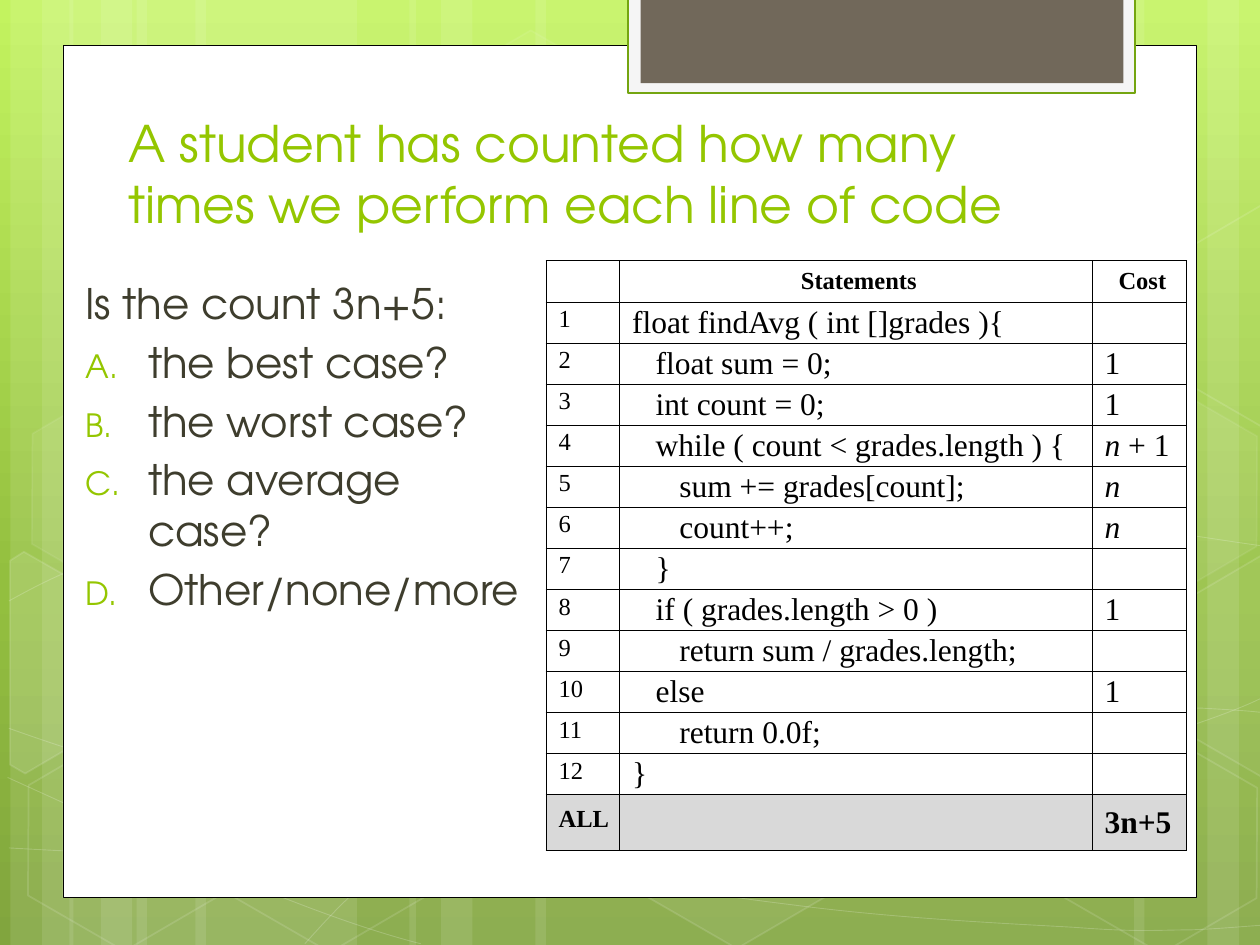
from copy import deepcopy

from lxml import etree
from pptx import Presentation
from pptx.dml.color import RGBColor
from pptx.enum.shapes import MSO_SHAPE
from pptx.enum.text import MSO_ANCHOR, MSO_AUTO_SIZE, PP_ALIGN
from pptx.oxml.ns import qn
from pptx.util import Inches, Pt

RECTANGLE, HEXAGON = MSO_SHAPE.RECTANGLE, MSO_SHAPE.HEXAGON
LEFT, CENTER = PP_ALIGN.LEFT, PP_ALIGN.CENTER
MIDDLE, BOTTOM = MSO_ANCHOR.MIDDLE, MSO_ANCHOR.BOTTOM
NO_FIT = MSO_AUTO_SIZE.NONE

WHITE = RGBColor(0xFF, 0xFF, 0xFF)
BLACK = RGBColor(0x00, 0x00, 0x00)
LIME = RGBColor(0x94, 0xC6, 0x00)
DARK_LIME = RGBColor(0x74, 0xA5, 0x10)
OLIVE = RGBColor(0x3E, 0x3D, 0x2D)
TAUPE = RGBColor(0x71, 0x68, 0x5A)
PALE = RGBColor(0xF5, 0xF5, 0xF5)
GRAY = RGBColor(0xD9, 0xD9, 0xD9)
BACKDROP = [(0, RGBColor(0xC3, 0xF3, 0x5F)), (0.62, RGBColor(0x93, 0xBF, 0x3F)),
            (1, RGBColor(0x81, 0xA5, 0x3E))]
SANS, SERIF = "TeX Gyre Adventor", "Times New Roman"

deck = Presentation()
deck.slide_width, deck.slide_height = Inches(10), Inches(7.5)
page = deck.slides.add_slide(deck.slide_layouts[5])
UNIT = deck.slide_width / 120  # grid of 120 columns by 90 rows


def paint(shape, fill=None, fill_alpha=100, line=None, width=1, line_alpha=100):
    """Set fill and line, with opacities in percent."""
    shape.shadow.inherit = False
    for part, color, alpha in ((shape.fill, fill, fill_alpha),
                               (shape.line.fill, line, line_alpha)):
        if color is None:
            part.background()
            continue
        part.solid()
        part.fore_color.rgb = color
        owner = shape.element.spPr
        if part is not shape.fill:
            shape.line.width = Pt(width)
            owner = owner.find(qn("a:ln"))
        if alpha < 100:
            tint = owner.find(qn("a:solidFill")).find(qn("a:srgbClr"))
            etree.SubElement(tint, qn("a:alpha")).set("val", str(alpha * 1000))


def write(para, text, font, size, color, bold=False, italic=False):
    """Add one run to a paragraph."""
    span = para.add_run()
    span.text = text
    span.font.name, span.font.size = font, Pt(size)
    span.font.color.rgb = color
    span.font.bold, span.font.italic = bold, italic


# Background gradient, light at the top
backdrop = page.background.fill
backdrop.gradient()
backdrop.gradient_angle = 270
stop_list = page.element.find(".//" + qn("a:gsLst"))
stop_list.insert(1, deepcopy(stop_list[0]))
for stop, (position, color) in zip(backdrop.gradient_stops, BACKDROP):
    stop.position, stop.color.rgb = position, color

# Translucent vertical stripes: left column, columns wide
STRIPES = [(13, 21), (1, 6), (4, 10), (18.6, 21), (6.6, 6), (9.6, 10),
           (88, 21), (115, 6), (108, 10), (51, 37), (39, 6), (42, 10)]
for column, span_columns in STRIPES:
    stripe = page.shapes.add_shape(RECTANGLE, int(column * UNIT), 0,
                                   int(span_columns * UNIT), deck.slide_height)
    paint(stripe, WHITE, 10)

# Sweeping curves: Bezier points in inches, three more for each segment
CURVES = [
    [(0.07, 6.73), (0.61, 6.76), (1.15, 6.79), (1.9, 6.78), (2.65, 6.77), (3.58, 6.75),
     (4.58, 6.65), (5.58, 6.55), (7, 6.36), (7.92, 6.17), (8.83, 5.98), (9.77, 5.68),
     (10.07, 5.51)],
    [(0.07, 4.77), (0.36, 4.61), (0.65, 4.46), (1.21, 4.31), (1.78, 4.16), (2.59, 3.94),
     (3.47, 3.87), (4.36, 3.8), (5.44, 3.79), (6.54, 3.87), (7.64, 3.95), (9.47, 4.26),
     (10.07, 4.34)],
    [(0.06, 6.17), (1.27, 6.72), (2.47, 7.27), (3.34, 7.49)],
    [(0.07, 5.78), (0.38, 5.89), (0.7, 6), (1.28, 6.16), (1.86, 6.31), (2.73, 6.56),
     (3.57, 6.73), (4.4, 6.9), (5.45, 7.08), (6.28, 7.18), (7.11, 7.29), (8, 7.33),
     (8.53, 7.36), (9.05, 7.4), (9.19, 7.38), (9.45, 7.38), (9.71, 7.37), (9.89, 7.35),
     (10.07, 7.34)],
    [(2.42, 7.49), (2.6, 7.29), (2.78, 7.09), (3.02, 6.91), (3.26, 6.73), (3.6, 6.53),
     (3.88, 6.39), (4.16, 6.25), (4.33, 6.19), (4.7, 6.09), (5.06, 5.99), (5.73, 5.85),
     (6.08, 5.78), (6.44, 5.71), (6.49, 5.71), (6.8, 5.69), (7.11, 5.66), (7.6, 5.63),
     (7.94, 5.62), (8.29, 5.61), (8.86, 5.62), (8.86, 5.62), (9.08, 5.62), (9.31, 5.62),
     (9.53, 5.62), (9.71, 5.63), (9.88, 5.64), (9.97, 5.65), (10.06, 5.66),
     (10.03, 5.65), (10.06, 5.66)],
]
for knots in CURVES:
    knots = [(Inches(x), Inches(y)) for x, y in knots]
    outline = page.shapes.build_freeform(*knots[0])
    outline.add_line_segments(knots[1:], close=False)
    curve = outline.convert_to_shape()
    # Each three straight pieces become one cubic segment
    pieces = curve.element.findall(".//" + qn("a:lnTo"))
    for first in range(0, len(pieces), 3):
        bend = etree.SubElement(pieces[first].getparent(), qn("a:cubicBezTo"))
        for piece in pieces[first:first + 3]:
            piece.getparent().remove(piece)
            bend.append(piece[0])
    paint(curve, line=WHITE, width=0.5, line_alpha=20)

# Hexagons: left and top in inches, fill opacity, line opacity
HEXAGONS = [(3.34, 0.36, 4, 8), (4.97, 5.89, 6, 12), (0.11, 5.91, 0, 12),
            (0.14, 3.12, 7, 8), (1.74, 5.92, 0, 12), (7.53, 4.53, 10, 12),
            (8.34, 5.93, 0, 12), (8.34, 3.14, 7, 8)]
for left, top, fill_alpha, line_alpha in HEXAGONS:
    hexagon = page.shapes.add_shape(HEXAGON, Inches(left), Inches(top),
                                    Inches(1.75), Inches(1.52))
    hexagon.adjustments[0] = 0.285
    hexagon.rotation = 30
    paint(hexagon, WHITE if fill_alpha else None, fill_alpha, WHITE, 1, line_alpha)

# Hexagons cut off by the slide's edges
CUT_HEXAGONS = [
    (10, [(0.08, 4.45), (0.19, 4.38), (0.96, 4.82), (0.95, 5.7), (0.2, 6.14), (0.08, 6.07)]),
    (4, [(9.26, 4.85), (10.01, 4.41), (10.09, 4.46), (10.09, 6.13), (10.02, 6.17), (9.26, 5.73)]),
    (0, [(9.26, 2.07), (10.01, 1.63), (10.1, 1.68), (10.09, 3.35), (10.02, 3.39), (9.26, 2.95)]),
]
for fill_alpha, corners in CUT_HEXAGONS:
    corners = [(Inches(x), Inches(y)) for x, y in corners]
    outline = page.shapes.build_freeform(*corners[0])
    outline.add_line_segments(corners[1:], close=True)
    paint(outline.convert_to_shape(), WHITE if fill_alpha else None, fill_alpha, WHITE, 1, 12)

# White panel and the tab at its top, in grid units
for frame, fill, line, width in [((6, 4.32, 108, 81.2), WHITE, BLACK, 0.5),
                                 ((59.84, -0.24, 48.28, 9.12), PALE, DARK_LIME, 1.25),
                                 ((61, -0.24, 46, 8.16), TAUPE, None, 0)]:
    paint(page.shapes.add_shape(RECTANGLE, *[int(v * UNIT) for v in frame]),
          fill, line=line, width=width)

# Title, brought in front of the panel
title = page.shapes.title
title.left, title.top, title.width, title.height = [int(v * UNIT) for v in (11, 7.84, 92.2, 15)]
page.shapes.element.append(title.element)
title.text_frame.auto_size = NO_FIT
title.text_frame.vertical_anchor = BOTTOM
heading = title.text_frame.paragraphs[0]
heading.alignment = LEFT
write(heading, "A student has counted how many times we perform each line of code", SANS, 28.8, LIME)

# Question and lettered answers
box = page.shapes.add_textbox(*[int(v * UNIT) for v in (6.08, 25.84, 44.9, 53.2)]).text_frame
box.word_wrap = True
ANSWERS = ["the best case?", "the worst case?", "the average case?", "Other/none/more"]
for index, text in enumerate(["Is the count 3n+5:"] + ANSWERS):
    para = box.add_paragraph() if index else box.paragraphs[0]
    para.space_before = Pt(4.8)
    write(para, text, SANS, 24, OLIVE)
    props = para._p.get_or_add_pPr()
    props.set("marL", str(Inches(0.57 if index else 0.07)))
    if index:
        props.set("indent", str(Inches(-0.5)))
        bullet_color = etree.SubElement(props, qn("a:buClr"))
        etree.SubElement(bullet_color, qn("a:srgbClr")).set("val", str(LIME))
        etree.SubElement(props, qn("a:buSzPct")).set("val", "76000")
        etree.SubElement(props, qn("a:buAutoNum")).set("type", "alphaUcPeriod")

# Cost table: indent level, statement, cost
CODE = [(0, "float findAvg ( int []grades ){", ""), (1, "float sum = 0;", "1"),
        (1, "int count = 0;", "1"), (1, "while ( count < grades.length ) {", "n + 1"),
        (2, "sum += grades[count];", "n"), (2, "count++;", "n"), (1, "}", ""),
        (1, "if ( grades.length > 0 )", "1"), (2, "return sum / grades.length;", ""),
        (1, "else", "1"), (2, "return 0.0f;", ""), (0, "}", "")]
ROWS = ([(0, ("", "Statements", "Cost"))]
        + [(level, (str(n), code, cost)) for n, (level, code, cost) in enumerate(CODE, 1)]
        + [(0, ("ALL", "", "3n+5"))])
LAST = len(ROWS) - 1
table = page.shapes.add_table(len(ROWS), 3, *[int(v * UNIT) for v in (52, 24.84, 61, 56.16)]).table
table.first_row = table.horz_banding = False
for column, units in zip(table.columns, (7, 45, 9)):
    column.width = int(units * UNIT)
for r, (level, texts) in enumerate(ROWS):
    table.rows[r].height = Inches(0.44 if r == LAST else (4.68 - 0.44) / LAST)
    for c, text in enumerate(texts):
        cell = table.cell(r, c)
        cell.margin_left, cell.margin_right = Inches(0.1), Inches(0.05)
        cell.margin_top = cell.margin_bottom = 0
        cell.vertical_anchor = MIDDLE
        for side in ("a:lnL", "a:lnR", "a:lnT", "a:lnB"):
            border = etree.SubElement(cell._tc.get_or_add_tcPr(), qn(side), w=str(Pt(0.45)))
            ink = etree.SubElement(border, qn("a:solidFill"))
            etree.SubElement(ink, qn("a:srgbClr")).set("val", str(BLACK))
        if r == LAST:
            cell.fill.solid()
            cell.fill.fore_color.rgb = GRAY
        else:
            cell.fill.background()
        if not text:
            continue
        para = cell.text_frame.paragraphs[0]
        bold = r in (0, LAST)
        size = 14 if r == 0 or c == 0 else 18
        if r == 0:
            para.alignment = CENTER
        elif c == 0:
            para.line_spacing = 0.63
        elif c == 1:
            para._p.get_or_add_pPr().set("marL", str(Pt(13.5 * level)))
        elif r == LAST:
            para.space_before = Pt(3.5)
        if c == 2 and text.startswith("n"):
            write(para, "n", SERIF, size, BLACK, italic=True)
            text = text[1:]
        if text:
            write(para, text, SERIF, size, BLACK, bold)

deck.save("out.pptx")
